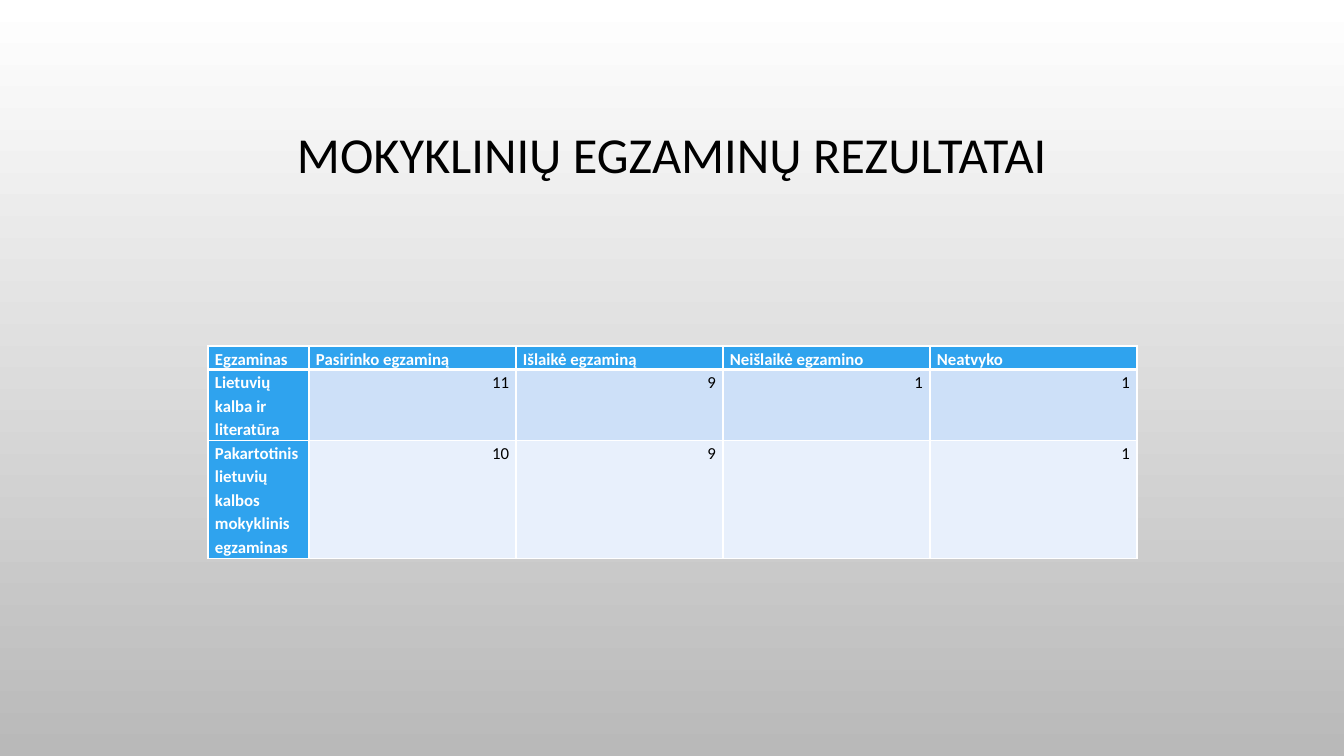
from dataclasses import dataclass

from lxml.etree import SubElement
from pptx import Presentation
from pptx.dml.color import RGBColor as Rgb
from pptx.enum.text import MSO_ANCHOR as Anchor, PP_ALIGN as Align
from pptx.oxml.ns import qn
from pptx.util import Pt

PX = 12192000 / 1344


@dataclass(frozen=True)
class Theme:
    font: str = "Calibri"
    title_size: int = 36
    table_size: int = 12
    dark: str = "000000"
    light: str = "FFFFFF"
    accent: str = "2FA3EE"
    bands: tuple = ("CDE0F8", "E8F0FC")
    backdrop: tuple = ("FFFFFF", "B9B9B9")
    thin: int = 1
    thick: int = 3


THEME = Theme()

RESULTS = [
    ["Egzaminas", "Pasirinko egzaminą", "Išlaikė egzaminą", "Neišlaikė egzamino", "Neatvyko"],
    ["Lietuvių kalba ir literatūra", "11", "9", "1", "1"],
    ["Pakartotinis lietuvių kalbos mokyklinis\negzaminas", "10", "9", "", "1"],
]
COLUMN_WIDTHS = [101, 207, 207, 207, 207]
ROW_HEIGHTS = [23, 70, 118]


def px(length):
    return round(length * PX)


def style_para(para, size, color, align, spacing, bold=False):
    para.alignment = align
    para.line_spacing = spacing
    font = para.font
    font.name, font.size, font.bold = THEME.font, Pt(size), bold
    font.color.rgb = Rgb.from_string(color)


def paint_background(page):
    fill = page.background.fill
    fill.gradient()
    fill.gradient_angle = 270
    for stop, color in zip(fill.gradient_stops, THEME.backdrop):
        stop.color.rgb = Rgb.from_string(color)


def place_title(page, box, text):
    title = page.shapes.title
    title.left, title.top, title.width, title.height = map(px, box)
    frame = title.text_frame
    frame.text = text
    frame.word_wrap = True
    frame.vertical_anchor = Anchor.MIDDLE
    style_para(frame.paragraphs[0], THEME.title_size, THEME.dark, Align.CENTER, 0.9)


def add_borders(cell, row):
    # The rule under the header is thicker than the others
    widths = {
        "a:lnL": THEME.thin,
        "a:lnR": THEME.thin,
        "a:lnT": THEME.thick if row == 1 else THEME.thin,
        "a:lnB": THEME.thick if row == 0 else THEME.thin,
    }
    properties = cell._tc.get_or_add_tcPr()
    for side, width in widths.items():
        line = SubElement(properties, qn(side), w=str(Pt(width)))
        solid = SubElement(line, qn("a:solidFill"))
        SubElement(solid, qn("a:srgbClr"), val=THEME.light)


def fill_cell(cell, text, row, column):
    heading = row == 0 or column == 0
    cell.margin_left = cell.margin_right = px(7)
    cell.margin_top = cell.margin_bottom = 0
    add_borders(cell, row)
    cell.fill.solid()
    cell.fill.fore_color.rgb = Rgb.from_string(THEME.accent if heading else THEME.bands[row - 1])
    cell.text_frame.text = text
    for para in cell.text_frame.paragraphs:
        style_para(para, THEME.table_size, THEME.light if heading else THEME.dark,
                   Align.LEFT if heading else Align.RIGHT, 1.15, heading)


def place_results(page, box):
    frame = page.shapes.add_table(len(RESULTS), len(COLUMN_WIDTHS), *map(px, box))
    table = frame.table
    for column, width in zip(table.columns, COLUMN_WIDTHS):
        column.width = px(width)
    for row, height in zip(table.rows, ROW_HEIGHTS):
        row.height = px(height)
    for row, texts in enumerate(RESULTS):
        for column, text in enumerate(texts):
            fill_cell(table.cell(row, column), text, row, column)


def main():
    deck = Presentation()
    deck.slide_width, deck.slide_height = px(1344), px(756)
    page = deck.slides.add_slide(deck.slide_layouts[5])
    paint_background(page)
    place_title(page, (101, 69, 1142, 176), "MOKYKLINIŲ EGZAMINŲ REZULTATAI")
    place_results(page, (208, 346, sum(COLUMN_WIDTHS), sum(ROW_HEIGHTS)))
    deck.save("out.pptx")


if __name__ == "__main__":
    main()
